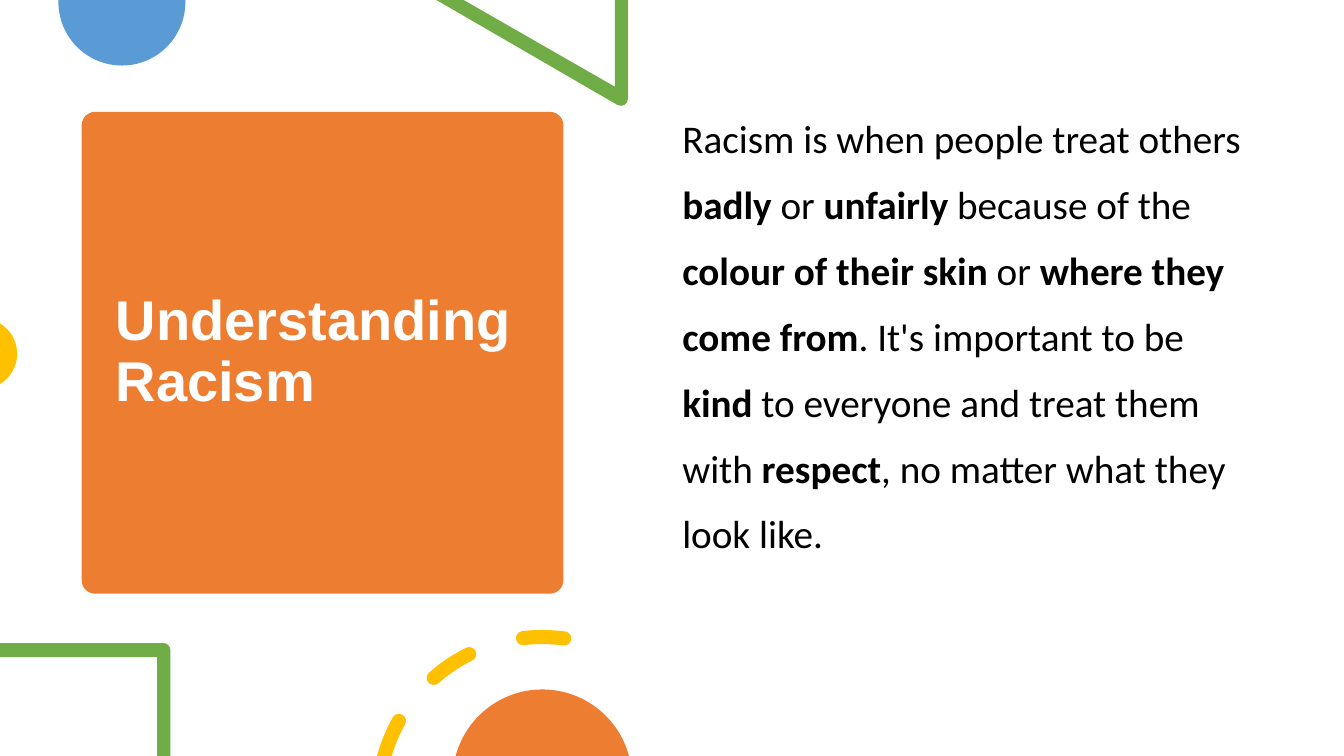
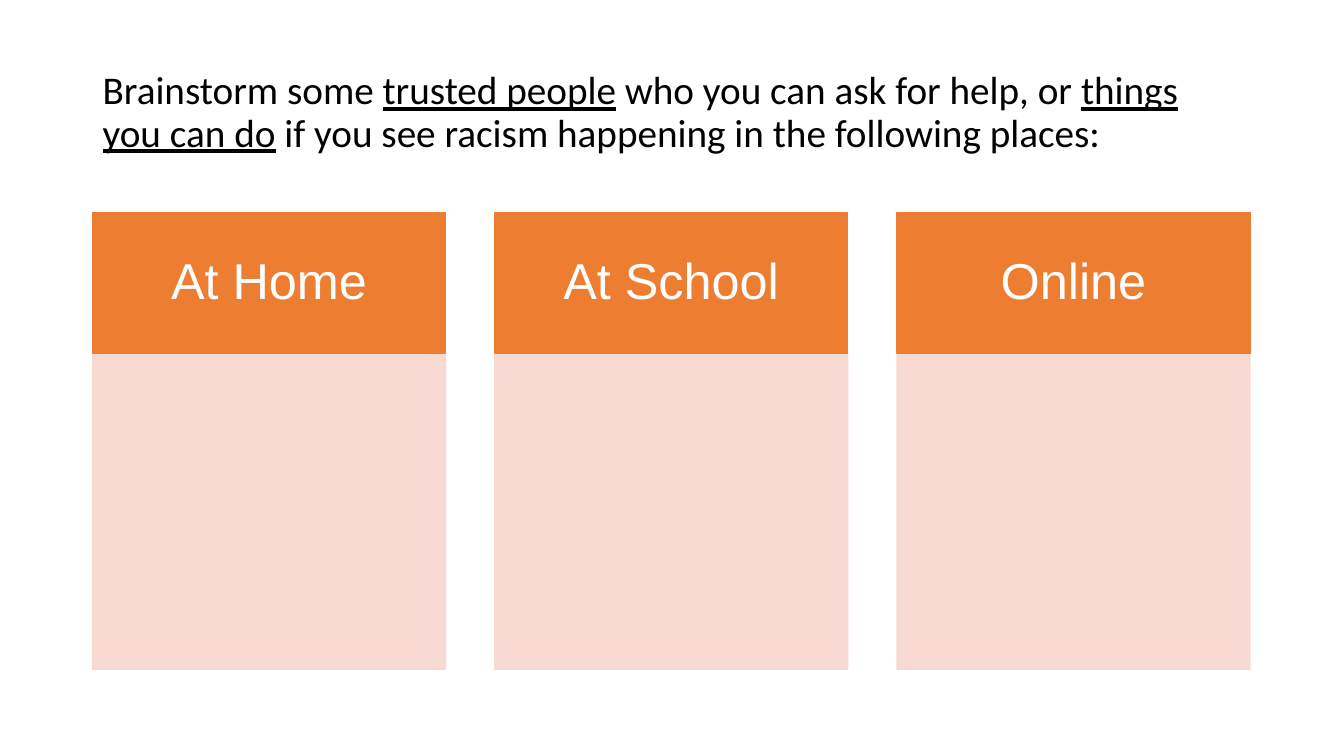
from math import asin, ceil, cos, degrees, radians, sin, tan

from lxml.etree import SubElement
from pptx import Presentation
from pptx.dml.color import RGBColor
from pptx.enum.shapes import MSO_SHAPE as Preset
from pptx.enum.text import MSO_ANCHOR as Anchor, PP_ALIGN as Align
from pptx.oxml.ns import qn
from pptx.util import Inches, Pt

WIDTH, HEIGHT = 40 / 3, 7.5
COLORS = {
    "orange": "ED7D31",
    "blue": "5B9BD5",
    "green": "70AD47",
    "yellow": "FFC000",
    "peach": "F8D7CE",
    "white": "FFFFFF",
    "black": "000000",
}


def rgb(name):
    """Return the named palette colour."""
    return RGBColor.from_string(COLORS[name])


def paint(shape, color, line_width=0, opacity=100):
    """Give a shape a flat fill and an optional outline of the same colour."""
    shape.shadow.inherit = False
    fills = [shape.fill]
    if line_width:
        shape.line.width = Pt(line_width)
        fills.append(shape.line.fill)
    else:
        shape.line.fill.background()
    for fill in fills:
        fill.solid()
        fill.fore_color.rgb = rgb(color)
    if opacity < 100:
        for tint in shape.element.spPr.iter(qn("a:srgbClr")):
            SubElement(tint, qn("a:alpha"), val=str(opacity * 1000))
    return shape


def add_box(slide, box, color, preset=Preset.RECTANGLE, **finish):
    """Add a painted preset shape."""
    shape = slide.shapes.add_shape(preset, *map(Inches, box))
    return paint(shape, color, **finish)


def write(shape, text, size=28, font="Calibri", color="black", bold=False,
          emphasis="bold", align=Align.LEFT, anchor=Anchor.MIDDLE,
          spacing=0.9, before=0, insets=(0.1, 0.05)):
    """Write one paragraph, with emphasis on the parts between asterisks."""
    frame = shape.text_frame
    frame.word_wrap = True
    frame.vertical_anchor = anchor
    frame.margin_left = frame.margin_right = Inches(insets[0])
    frame.margin_top = frame.margin_bottom = Inches(insets[1])
    paragraph = frame.paragraphs[0]
    paragraph.alignment = align
    paragraph.line_spacing = spacing
    paragraph.space_before = Pt(before)
    for index, part in enumerate(text.split("*")):
        run = paragraph.add_run()
        run.text = part
        run.font.size = Pt(size)
        run.font.name = font
        run.font.color.rgb = rgb(color)
        run.font.bold = bold
        if index % 2:
            setattr(run.font, emphasis, True)


def add_text(slide, box, text, **style):
    """Add a text box."""
    write(slide.shapes.add_textbox(*map(Inches, box)), text, **style)


def lines(*points):
    """Return straight outline steps."""
    return [(point,) for point in points]


def arc(cx, cy, radius, start, end):
    """Return a start point and curve steps, with angles clockwise from the right."""
    count = ceil(abs(end - start) / 90)
    turn = radians(end - start) / count
    reach = 4 / 3 * tan(turn / 4)

    def on_ring(angle, pull=0):
        """Return a ring point moved along its tangent."""
        return (cx + radius * (cos(angle) - pull * sin(angle)),
                cy + radius * (sin(angle) + pull * cos(angle)))

    angles = [radians(start) + turn * i for i in range(count + 1)]
    curves = [(on_ring(a, reach), on_ring(b, -reach), on_ring(b))
              for a, b in zip(angles, angles[1:])]
    return [(on_ring(angles[0]),)] + curves


def dash(cx, cy, radius, start, end, half=0.07):
    """Return a round-ended piece of a ring, cut by the slide bottom without a start."""
    def cap(angle, turn):
        """Return half a circle at one end of the dash."""
        return arc(cx + radius * cos(radians(angle)),
                   cy + radius * sin(radians(angle)), half, turn, turn + 180)[1:]

    def first(ring):
        """Return the angle where this ring begins."""
        return degrees(asin((cy - HEIGHT) / ring)) - 180 if start is None else start

    outer, inner = radius + half, radius - half
    outline = (arc(cx, cy, outer, first(outer), end) + cap(end, end)
               + arc(cx, cy, inner, end, first(inner))[1:])
    return outline if start is None else outline + cap(start, start + 180)


def add_outline(slide, contours, color):
    """Add one freeform made of closed contours with lines and curves."""
    builder = None
    for contour in contours:
        points = [tuple(map(Inches, point)) for step in contour for point in step]
        if builder is None:
            builder = slide.shapes.build_freeform(*points[0])
        else:
            builder.move_to(*points[0])
        builder.add_line_segments(points[1:], close=True)
    shape = builder.convert_to_shape()
    segments = iter(list(shape.element.spPr.iter(qn("a:lnTo"))))
    for step in (step for contour in contours for step in contour[1:]):
        segment, *others = [next(segments) for _ in step]
        if others:
            curve = segment.makeelement(qn("a:cubicBezTo"))
            segment.addprevious(curve)
            for piece in (segment, *others):
                curve.append(piece[0])
                piece.getparent().remove(piece)
    paint(shape, color)


def add_edge_shapes(slide):
    """Add the round and angular shapes behind the text."""
    triangle = lines((6.23, 0), (6.1, 0), (6.1, 0.86), (4.6, 0), (4.33, 0))
    add_outline(slide, [arc(1.21, 0.02, 0.63, 0, 180)
                        + lines((0.58, 0), (1.84, 0))], "blue")
    add_outline(slide, [triangle + arc(6.16, 0.98, 0.07, 120, 0)], "green")
    add_outline(slide, [arc(-0.18, 3.51, 0.35, -59, 59)], "yellow")


def add_bottom_shapes(slide):
    """Add the square, dashed ring and disc along the bottom."""
    square = lines((0, 6.38), (0, 6.52), (1.56, 6.52), (1.56, HEIGHT), (1.69, HEIGHT))
    add_outline(slide, [square + arc(1.62, 6.45, 0.07, 0, -90)], "green")
    spans = ((None, -150.7), (-131.3, -116.4), (-96.7, -82.3))
    add_outline(slide, [dash(5.38, 7.95, 1.63, *span) for span in spans], "yellow")
    add_outline(slide, [arc(5.38, 7.73, 0.89, 195, 345)], "orange")


def add_definition(slide):
    """Build the slide that explains the term."""
    card = add_box(slide, (0.81, 1.11, 4.78, 4.78), "orange",
                   Preset.ROUNDED_RECTANGLE)
    card.adjustments[0] = 0.028
    add_text(slide, (1.05, 1.22, 4.31, 4.56), "Understanding Racism",
             size=40, font="Arial", color="white", bold=True)
    add_edge_shapes(slide)
    add_text(slide, (6.67, 0.9, 5.75, 5.35),
             "Racism is when people treat others *badly *or *unfairly* because of "
             "the *colour of their skin* or *where they come from*. It's important "
             "to be *kind* to everyone and treat them with *respect*, no matter "
             "what they look like.",
             anchor=Anchor.TOP, spacing=1.4, before=10)
    add_bottom_shapes(slide)


def add_brainstorm(slide):
    """Build the slide with a column to fill in for each place."""
    left, column, pitch = 0.92, 3.52, 3.99
    add_text(slide, (left, 0.4, 11.5, 1.45),
             "Brainstorm some *trusted people* who you can ask for help, or "
             "*things you can do* if you see racism happening in the following "
             "places:", emphasis="underline")
    for index, place in enumerate(("At Home", "At School", "Online")):
        x = left + index * pitch
        header = add_box(slide, (x, 2.11, 3.5, 1.4), "orange", line_width=1)
        write(header, place, size=36, font="Arial", color="white",
              align=Align.CENTER, insets=(0.28, 0.16))
        add_box(slide, (x, column, 3.5, 3.12), "peach", line_width=1, opacity=90)


def main():
    """Build and save the presentation."""
    deck = Presentation()
    deck.slide_width, deck.slide_height = Inches(WIDTH), Inches(HEIGHT)
    for build in (add_definition, add_brainstorm):
        build(deck.slides.add_slide(deck.slide_layouts[6]))
    deck.save("out.pptx")


if __name__ == "__main__":
    main()
